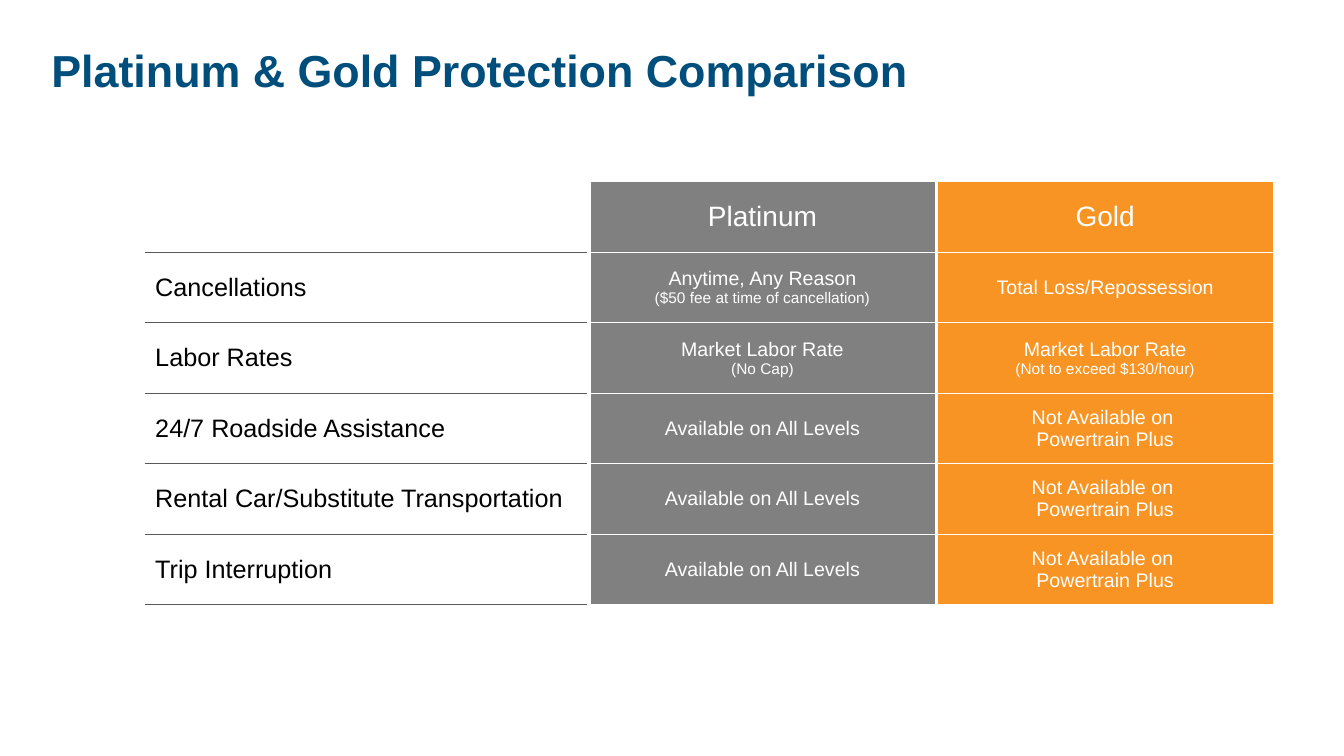
from dataclasses import dataclass

import lxml.etree
import pptx
import pptx.dml.color
import pptx.enum.text
import pptx.oxml.ns
import pptx.util

Pt = pptx.util.Pt
ALIGN = pptx.enum.text.PP_ALIGN
MIDDLE = pptx.enum.text.MSO_ANCHOR.MIDDLE
qn = pptx.oxml.ns.qn


@dataclass(frozen=True)
class Theme:
    font: str = "Arial"
    heading: str = "004E7C"
    label: str = "000000"
    white: str = "FFFFFF"
    platinum: str = "808080"
    gold: str = "F79423"
    rule: str = "595959"
    title_size: int = 32
    plan_size: int = 20
    label_size: int = 18
    value_size: int = 14
    detail_size: int = 11


THEME = Theme()

NOT_ON_PLUS = "Not Available on \nPowertrain Plus"
ALL_LEVELS = "Available on All Levels"

# A value is its text, or its text and a smaller detail below it
COMPARISON = [
    ("", "Platinum", "Gold"),
    ("Cancellations",
     ("Anytime, Any Reason\n", "($50 fee at time of cancellation)"),
     "Total Loss/Repossession"),
    ("Labor Rates",
     ("Market Labor Rate\n", "(No Cap)"),
     ("Market Labor Rate\n", "(Not to exceed $130/hour)")),
    ("24/7 Roadside Assistance", ALL_LEVELS, NOT_ON_PLUS),
    ("Rental Car/Substitute Transportation", ALL_LEVELS, NOT_ON_PLUS),
    ("Trip Interruption", ALL_LEVELS, NOT_ON_PLUS),
]
COLUMN_SHARES = (4.4, 3.45, 3.35)
PLAN_FILLS = (None, THEME.platinum, THEME.gold)


def write(paragraph, text, *, size, color, bold=False, align=ALIGN.LEFT):
    """Append text to a paragraph; each newline becomes a line break."""
    paragraph.alignment = align
    for index, line in enumerate(text.split("\n")):
        if index:
            paragraph.add_line_break()
            line_break = paragraph._p.findall(qn("a:br"))[-1]
            lxml.etree.SubElement(line_break, qn("a:rPr"), sz=str(size * 100))
        if line:
            run = paragraph.add_run()
            run.text = line
            run.font.name = THEME.font
            run.font.size = Pt(size)
            run.font.bold = bold
            run.font.color.rgb = pptx.dml.color.RGBColor.from_string(color)


def set_borders(cell, **edges):
    """Draw cell edges, given as L, R, T, B = (color, width)."""
    properties = cell._tc.get_or_add_tcPr()
    for position, side in enumerate("LRTB"):
        color, width = edges[side]
        line = lxml.etree.Element(qn(f"a:ln{side}"), w=str(int(Pt(width))))
        fill = lxml.etree.SubElement(line, qn("a:solidFill"))
        lxml.etree.SubElement(fill, qn("a:srgbClr"), val=color)
        properties.insert(position, line)


def cell_borders(row, column):
    white, last_row = THEME.white, len(COMPARISON) - 1
    label_rule = (THEME.rule, 0.5)
    inner = label_rule if column == 0 else (white, 0.75)
    outer_bottom = label_rule if column == 0 else (white, 1)
    return {
        "L": (white, 1 if column == 0 else 3),
        "R": (white, 2.25 if column == 2 else 3),
        "T": (white, 1) if row == 0 else inner,
        "B": outer_bottom if row == last_row else inner,
    }


def fill_cell(cell, row, column, content):
    cell.vertical_anchor = MIDDLE
    plan_fill = PLAN_FILLS[column]
    if plan_fill:
        cell.fill.solid()
        cell.fill.fore_color.rgb = pptx.dml.color.RGBColor.from_string(plan_fill)
    else:
        cell.fill.background()
    set_borders(cell, **cell_borders(row, column))

    paragraph = cell.text_frame.paragraphs[0]
    if column == 0:
        write(paragraph, content, size=THEME.label_size, color=THEME.label)
        return
    value, detail = content if isinstance(content, tuple) else (content, "")
    size = THEME.plan_size if row == 0 else THEME.value_size
    write(paragraph, value, size=size, color=THEME.white, align=ALIGN.CENTER)
    write(paragraph, detail, size=THEME.detail_size, color=THEME.white,
          align=ALIGN.CENTER)


def add_title(slide, left, top, width, height):
    title = slide.shapes.title
    title.left, title.top = Pt(left), Pt(top)
    title.width, title.height = Pt(width), Pt(height)
    frame = title.text_frame
    frame.auto_size = pptx.enum.text.MSO_AUTO_SIZE.NONE
    frame.vertical_anchor = MIDDLE
    frame.word_wrap = True
    heading = frame.paragraphs[0]
    heading.line_spacing = 0.9
    write(heading, "Platinum & Gold Protection Comparison",
          size=THEME.title_size, color=THEME.heading, bold=True)


def add_comparison(slide, left, top, width, height):
    comparison = slide.shapes.add_table(
        len(COMPARISON), len(COLUMN_SHARES),
        Pt(left), Pt(top), Pt(width), Pt(height)).table
    comparison.first_row = False
    comparison.horz_banding = False
    for column, share in zip(comparison.columns, COLUMN_SHARES):
        column.width = Pt(width * share / sum(COLUMN_SHARES))
    for row, contents in enumerate(COMPARISON):
        comparison.rows[row].height = Pt(height / len(COMPARISON))
        for column, content in enumerate(contents):
            fill_cell(comparison.cell(row, column), row, column, content)


def main():
    deck = pptx.Presentation()
    deck.slide_width, deck.slide_height = Pt(960), Pt(540)
    slide = deck.slides.add_slide(deck.slide_layouts.get_by_name("Title Only"))

    # Heading
    add_title(slide, 29.5, 26.6, 865.4, 50.4)
    # Plan comparison
    add_comparison(slide, 103.7, 129.6, 806.4, 302.4)

    deck.save("out.pptx")


if __name__ == "__main__":
    main()
